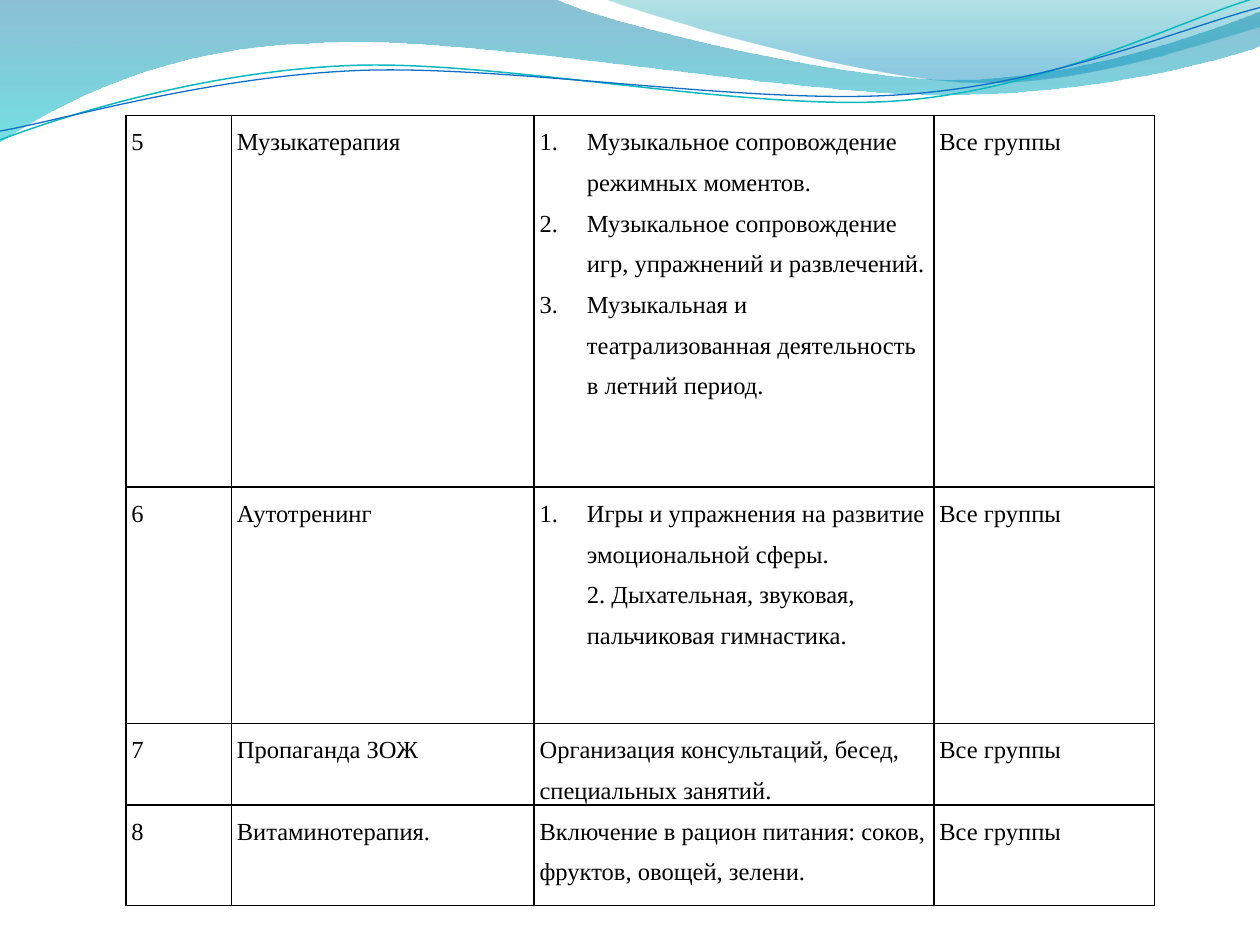
from copy import deepcopy
from dataclasses import dataclass
from math import cos, radians, sin

from lxml.etree import SubElement as Sub
from pptx import Presentation
from pptx.dml.color import RGBColor as Rgb
from pptx.oxml.ns import qn
from pptx.util import Inches, Pt


@dataclass(frozen=True)
class Theme:
    font: str = "Times New Roman"
    size: float = 14
    spacing: float = 1.5
    ink: str = "000000"
    border: float = 1
    band: tuple = ((0, "0074A1", 45), (1, "00C6CF", 55))
    sheen: tuple = ((0, "00A1A9", 30), (0.8, "008BBF", 45))
    teal: str = "0AB8BF"
    blue: str = "0F6FC6"


THEME = Theme()
GRID = 100
SLIDE_W, SLIDE_H = Inches(10), Inches(7.5)
WAVE_TILT = -2.7
WAVE_CENTER = (49.9, 5.8)
EVERYONE = "Все группы"
COLUMNS = (8.37, 24.03, 31.73, 17.52)
ROWS = (29.5, 18.75, 5.4, 8)

THERAPIES = (
    ("5", "Музыкатерапия", [
        "Музыкальное сопровождение режимных моментов.",
        "Музыкальное сопровождение игр, упражнений и развлечений.",
        "Музыкальная и театрализованная деятельность в летний период.",
    ]),
    ("6", "Аутотренинг", [
        "Игры и упражнения на развитие эмоциональной сферы.\v"
        "2. Дыхательная, звуковая, пальчиковая гимнастика.",
    ]),
    ("7", "Пропаганда ЗОЖ", "Организация консультаций, бесед, специальных занятий."),
    ("8", "Витаминотерапия.", "Включение в рацион питания: соков, фруктов, овощей, зелени."),
)

BAND = ((0, 0), (44, -0.1), (47.6, 1.7, 66.4, 6.3, 75.8, 6.3),
        (85.3, 6.3, 95.8, 2.6, 100, 0.9), (100.1, 3.6),
        (98.3, 4.4, 87, 7.6, 74.6, 7.5), (62.2, 7.5, 38.2, 2.8, 25.7, 3.4),
        (12.9, 3.6, 4.6, 8.3, -0.1, 11.3))
SHEEN = ((47.9, -0.1), (50.9, 1.1, 68.2, 6.2, 76.9, 6.5),
         (85.6, 6.9, 96.1, 3.2, 100, 2.1), (100, 0))
TEAL_WAVE = ((0, 11.1), (4.8, 9.3, 15.8, 5.7, 27.7, 5.2),
             (39.5, 4.7, 59.3, 8.9, 71.3, 8), (83.3, 7.1, 93.8, 1.5, 99.8, -0.2))
BLUE_WAVE = ((0, 10.4), (4.7, 9.6, 16.4, 6.1, 28.3, 5.6),
             (40.3, 5.1, 59.7, 8.4, 71.7, 7.5), (83.6, 6.7, 94.1, 2.1, 100, 0.6))


def grid(cells):
    return round(cells * SLIDE_W / GRID)


def turn(point, degrees):
    angle = radians(degrees)
    dx, dy = (value - center for value, center in zip(point, WAVE_CENTER))
    return (WAVE_CENTER[0] + dx * cos(angle) - dy * sin(angle),
            WAVE_CENTER[1] + dx * sin(angle) + dy * cos(angle))


def bend(outline, segments):
    corners = outline._element.iter(qn("a:lnTo"))
    remaining = iter(list(corners))
    for segment in segments[1:]:
        corner = next(remaining)
        if len(segment) == 6:
            corner.tag = qn("a:cubicBezTo")
            for _ in range(2):
                merged = next(remaining)
                corner.append(merged[0])
                merged.getparent().remove(merged)


def add_outline(shapes, segments, *, closed, tilt=0):
    points = [turn(segment[i:i + 2], -tilt)
              for segment in segments for i in range(0, len(segment), 2)]
    points = [(grid(x), grid(y)) for x, y in points]
    builder = shapes.build_freeform(*points[0])
    builder.add_line_segments(points[1:], close=closed)
    outline = builder.convert_to_shape()
    outline.shadow.inherit = False
    outline.rotation = tilt
    bend(outline, segments)
    return outline


def add_ribbon(shapes, segments, stops):
    ribbon = add_outline(shapes, segments, closed=True)
    ribbon.line.fill.background()
    ribbon.fill.gradient()
    ribbon.fill.gradient_angle = 270
    for stop, (position, color, _) in zip(ribbon.fill.gradient_stops, stops):
        stop.position = position
        stop.color.rgb = Rgb.from_string(color)
    tints = ribbon._element.spPr.iter(qn("a:srgbClr"))
    for tint, (_, _, opacity) in zip(list(tints), stops):
        Sub(tint, qn("a:alpha"), val=str(opacity * 1000))


def add_wave(shapes, segments, color, width):
    wave = add_outline(shapes, segments, closed=False, tilt=WAVE_TILT)
    wave.fill.background()
    wave.line.color.rgb = Rgb.from_string(color)
    wave.line.width = Pt(width)


def write(paragraph, text, *, size=THEME.size, color=THEME.ink, numbered=False):
    paragraph.text = text
    paragraph.line_spacing = THEME.spacing
    for run in paragraph.runs:
        run.font.name = THEME.font
        run.font.size = Pt(size)
        run.font.color.rgb = Rgb.from_string(color)
    for line_break in paragraph._p.findall(qn("a:br")):
        line_break.append(deepcopy(paragraph.runs[0]._r.rPr))
    if numbered:
        layout = paragraph._p.get_or_add_pPr()
        layout.set("marL", str(grid(3.75)))
        layout.set("indent", str(-grid(3.75)))
        Sub(layout, qn("a:buFont"), typeface="+mj-lt")
        Sub(layout, qn("a:buAutoNum"), type="arabicPeriod")


def frame_cell(cell):
    cell.margin_left = cell.margin_right = grid(0.43)
    cell.margin_top = cell.margin_bottom = 0
    borders = cell._tc.get_or_add_tcPr()
    for side in ("lnL", "lnR", "lnT", "lnB"):
        border = Sub(borders, qn(f"a:{side}"), w=str(Pt(THEME.border)))
        Sub(Sub(border, qn("a:solidFill")), qn("a:srgbClr"), val=THEME.ink)
    cell.fill.background()


def fill_cell(cell, content):
    frame_cell(cell)
    numbered = isinstance(content, list)
    items = content if numbered else [content]
    for index, item in enumerate(items):
        frame = cell.text_frame
        paragraph = frame.add_paragraph() if index else frame.paragraphs[0]
        write(paragraph, item, numbered=numbered)


def add_therapies(shapes):
    plan = shapes.add_table(
        len(ROWS), len(COLUMNS), grid(10), grid(9.17),
        grid(sum(COLUMNS)), grid(sum(ROWS))).table
    plan.first_row = plan.horz_banding = False
    for column, width in zip(plan.columns, COLUMNS):
        column.width = grid(width)
    for row, height, therapy in zip(plan.rows, ROWS, THERAPIES):
        row.height = grid(height)
        for cell, content in zip(row.cells, (*therapy, EVERYONE)):
            fill_cell(cell, content)


def main():
    deck = Presentation()
    deck.slide_width, deck.slide_height = SLIDE_W, SLIDE_H
    shapes = deck.slides.add_slide(deck.slide_layouts[6]).shapes
    add_ribbon(shapes, BAND, THEME.band)
    add_ribbon(shapes, SHEEN, THEME.sheen)
    waves = shapes.add_group_shape().shapes
    add_wave(waves, TEAL_WAVE, THEME.teal, 0.85)
    add_wave(waves, BLUE_WAVE, THEME.blue, 0.75)
    add_therapies(shapes)
    deck.save("out.pptx")


if __name__ == "__main__":
    main()
